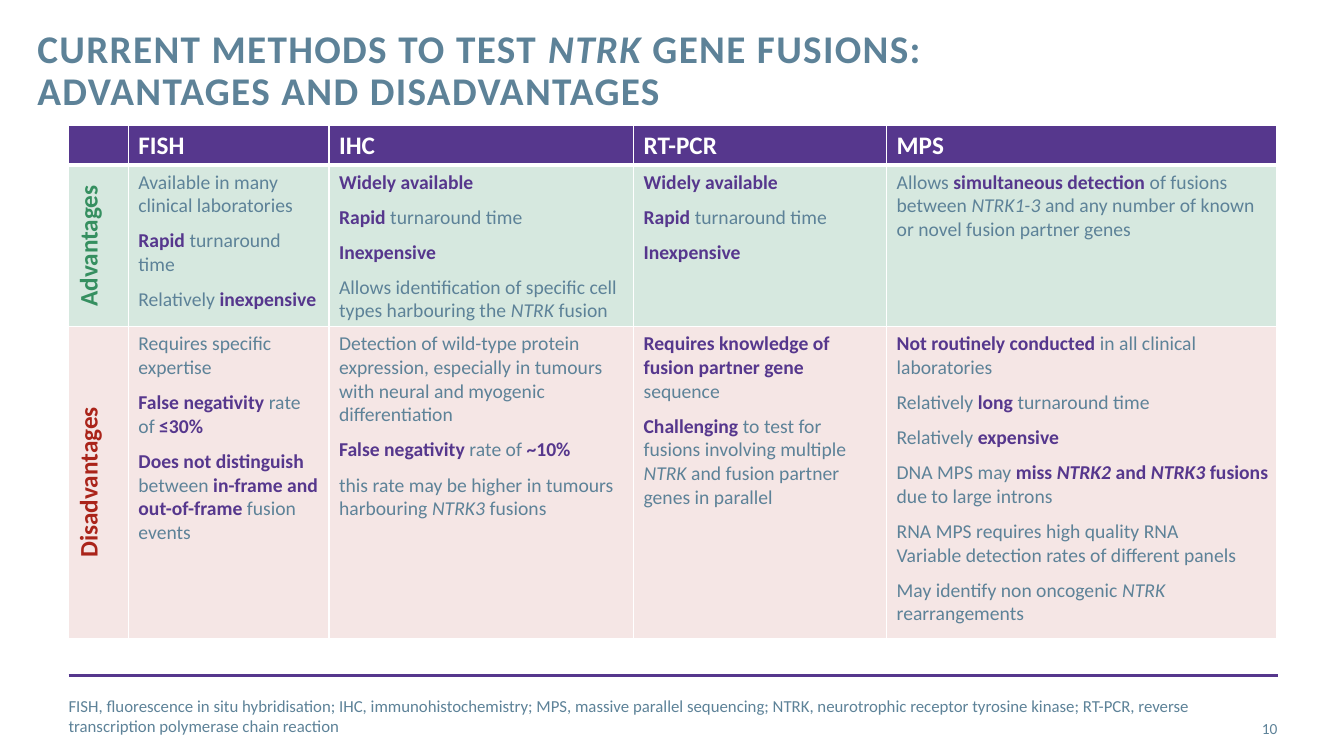
from lxml import etree
from pptx import Presentation, util as u
from pptx.dml.color import RGBColor
from pptx.enum import shapes, text
from pptx.oxml.ns import qn

WIDTH, HEIGHT = u.Inches(13.33), u.Inches(7.5)
FONT = "Calibri"
PURPLE = RGBColor(0x56, 0x37, 0x8D)
SLATE = RGBColor(0x5D, 0x82, 0x98)
GREEN = RGBColor(0x35, 0x8F, 0x60)
RED = RGBColor(0xAA, 0x24, 0x1A)
PINK = RGBColor(0xF2, 0xDC, 0xDB)
WHITE = RGBColor(0xFF, 0xFF, 0xFF)

MARGIN = 5.1
COLUMN_SHARES = [4.45, 14.93, 22.66, 18.83, 29.03]
ROW_SHARES = [4.93, 18.13, 41.2]

TITLE = "CURRENT METHODS TO TEST _NTRK_ GENE FUSIONS: ADVANTAGES AND DISADVANTAGES"
FOOTNOTE = (
    "FISH, fluorescence in situ hybridisation; IHC, immunohistochemistry; "
    "MPS, massive parallel sequencing; NTRK, neurotrophic receptor tyrosine kinase; "
    "RT-PCR, reverse transcription polymerase chain reaction"
)
METHODS = ["FISH", "IHC", "RT-PCR", "MPS"]
ADVANTAGES = [
    ["Available in many clinical laboratories", "*Rapid *turnaround time",
     "Relatively *inexpensive*"],
    ["*Widely available*", "*Rapid *turnaround time", "*Inexpensive*",
     "Allows identification of specific cell types harbouring the _NTRK_ fusion"],
    ["*Widely available*", "*Rapid *turnaround time", "*Inexpensive*"],
    ["Allows *simultaneous detection *of fusions between _NTRK1-3_ and any number "
     "of known or novel fusion partner genes"],
]
DISADVANTAGES = [
    ["Requires specific expertise", "*False negativity *rate of *≤30%*",
     "*Does not distinguish *between *in-frame and out-of-frame *fusion events"],
    ["Detection of wild-type protein expression, especially in tumours with neural "
     "and myogenic differentiation",
     "*False negativity *rate of *~10%*",
     "this rate may be higher in tumours harbouring _NTRK3_ fusions"],
    ["*Requires knowledge of fusion partner gene *sequence",
     "*Challenging *to test for fusions involving multiple _NTRK_ and fusion "
     "partner genes in parallel"],
    ["*Not routinely conducted *in all clinical laboratories",
     "Relatively *long *turnaround time", "Relatively *expensive*",
     "DNA MPS may *miss _NTRK2_ and _NTRK3_ fusions *due to large introns",
     "RNA MPS requires high quality RNA\vVariable detection rates of different panels",
     "May identify non oncogenic _NTRK_ rearrangements"],
]


def across(percent):
    return round(WIDTH * percent / 100)


def down(percent):
    return round(HEIGHT * percent / 100)


def style(run, size, color, bold=False, italic=False):
    font = run.font
    font.name, font.size, font.bold, font.italic = FONT, u.Pt(size), bold, italic
    font.color.rgb = color


def write_marked(paragraph, marked, size, color, strong_color, bold=False):
    for s, strong_part in enumerate(marked.split("*")):
        strong = s % 2 == 1
        for i, part in enumerate(strong_part.split("_")):
            for n, line in enumerate(part.split("\v")):
                if n:
                    paragraph.add_line_break()
                if line:
                    run = paragraph.add_run()
                    run.text = line
                    style(run, size, strong_color if strong else color,
                          bold or strong, i % 2 == 1)


def clear_insets(frame):
    frame.margin_left = frame.margin_right = frame.margin_top = frame.margin_bottom = 0
    frame.word_wrap = True
    frame.vertical_anchor = text.MSO_ANCHOR.MIDDLE


def add_title(slide):
    title = slide.shapes.title
    title.left, title.top = across(2.78), down(3.6)
    title.width, title.height = across(79.82), down(11.73)
    frame = title.text_frame
    clear_insets(frame)
    frame.auto_size = text.MSO_AUTO_SIZE.NONE
    heading = frame.paragraphs[0]
    heading.alignment = text.PP_ALIGN.LEFT
    heading.line_spacing = u.Pt(30)
    write_marked(heading, TITLE, 28, SLATE, SLATE, bold=True)
    for run in heading.runs:
        run.font._element.set("spc", "100")


def add_note(slide, words, left, top, width, size, align):
    box = slide.shapes.add_textbox(across(left), down(top), across(width), down(5.33))
    clear_insets(box.text_frame)
    note = box.text_frame.paragraphs[0]
    note.text = words
    note.alignment = align
    style(note.runs[0], size, SLATE)


def add_rule(slide):
    rule = slide.shapes.add_connector(
        shapes.MSO_CONNECTOR.STRAIGHT,
        across(MARGIN), down(89.33), across(100 - MARGIN + 0.2), down(89.33))
    rule.line.color.rgb = PURPLE
    rule.line.width = u.Pt(2)
    etree.SubElement(rule._element.spPr, qn("a:effectLst"))


def fill_cell(cell, color, opacity=100):
    cell.fill.solid()
    cell.fill.fore_color.rgb = color
    if opacity < 100:
        tint = cell._tc.tcPr.find(".//" + qn("a:srgbClr"))
        etree.SubElement(tint, qn("a:alpha"), val=str(opacity * 1000))


def border_cell(cell, top, bottom):
    sides = [("lnL", 1), ("lnR", 1), ("lnT", top), ("lnB", bottom)]
    for position, (side, points) in enumerate(sides):
        line = etree.Element(qn("a:" + side), w=str(u.Pt(points)))
        paint = etree.SubElement(line, qn("a:solidFill"))
        etree.SubElement(paint, qn("a:srgbClr"), val=str(WHITE))
        cell._tc.tcPr.insert(position, line)


def label_cell(cell, words, color):
    label = cell.text_frame.paragraphs[0]
    label.text = words
    style(label.runs[0], 18, color, bold=True)
    return label


def fill_points(cell, points):
    frame = cell.text_frame
    for index, point in enumerate(points):
        paragraph = frame.add_paragraph() if index else frame.paragraphs[0]
        if index:
            paragraph.space_before = u.Pt(8)
        write_marked(paragraph, point, 14, SLATE, PURPLE)


def add_comparison(slide):
    table = slide.shapes.add_table(
        len(ROW_SHARES), len(COLUMN_SHARES), across(MARGIN), down(16.53),
        across(sum(COLUMN_SHARES)), down(sum(ROW_SHARES))).table
    table.horz_banding = False
    for column, share in zip(table.columns, COLUMN_SHARES):
        column.width = across(share)
    for row, share in zip(table.rows, ROW_SHARES):
        row.height = down(share)

    for c, method in enumerate(METHODS, 1):
        label_cell(table.cell(0, c), method, WHITE)
    for cell in table.rows[0].cells:
        fill_cell(cell, PURPLE)
        border_cell(cell, 1, 3)

    aspects = [("Advantages", GREEN, GREEN, 20, ADVANTAGES),
               ("Disadvantages", RED, PINK, 70, DISADVANTAGES)]
    for r, (name, color, tint, opacity, points_by_method) in enumerate(aspects, 1):
        heading = table.cell(r, 0)
        label_cell(heading, name, color).alignment = text.PP_ALIGN.CENTER
        for c, points in enumerate(points_by_method, 1):
            fill_points(table.cell(r, c), points)
        for cell in table.rows[r].cells:
            fill_cell(cell, tint, opacity)
            border_cell(cell, 3 if r == 1 else 1, 1)
        heading._tc.tcPr.set("vert", "vert270")
    table.cell(2, 4).margin_right = u.Inches(0.04)


def main():
    deck = Presentation()
    deck.slide_width, deck.slide_height = WIDTH, HEIGHT
    slide = deck.slides.add_slide(deck.slide_layouts[5])
    add_rule(slide)
    add_title(slide)
    add_note(slide, "10", 88.6, 93.73, 6.45, 11, text.PP_ALIGN.RIGHT)
    add_note(slide, FOOTNOTE, MARGIN, 92, 89.95, 12, text.PP_ALIGN.LEFT)
    add_comparison(slide)
    deck.save("out.pptx")


if __name__ == "__main__":
    main()
